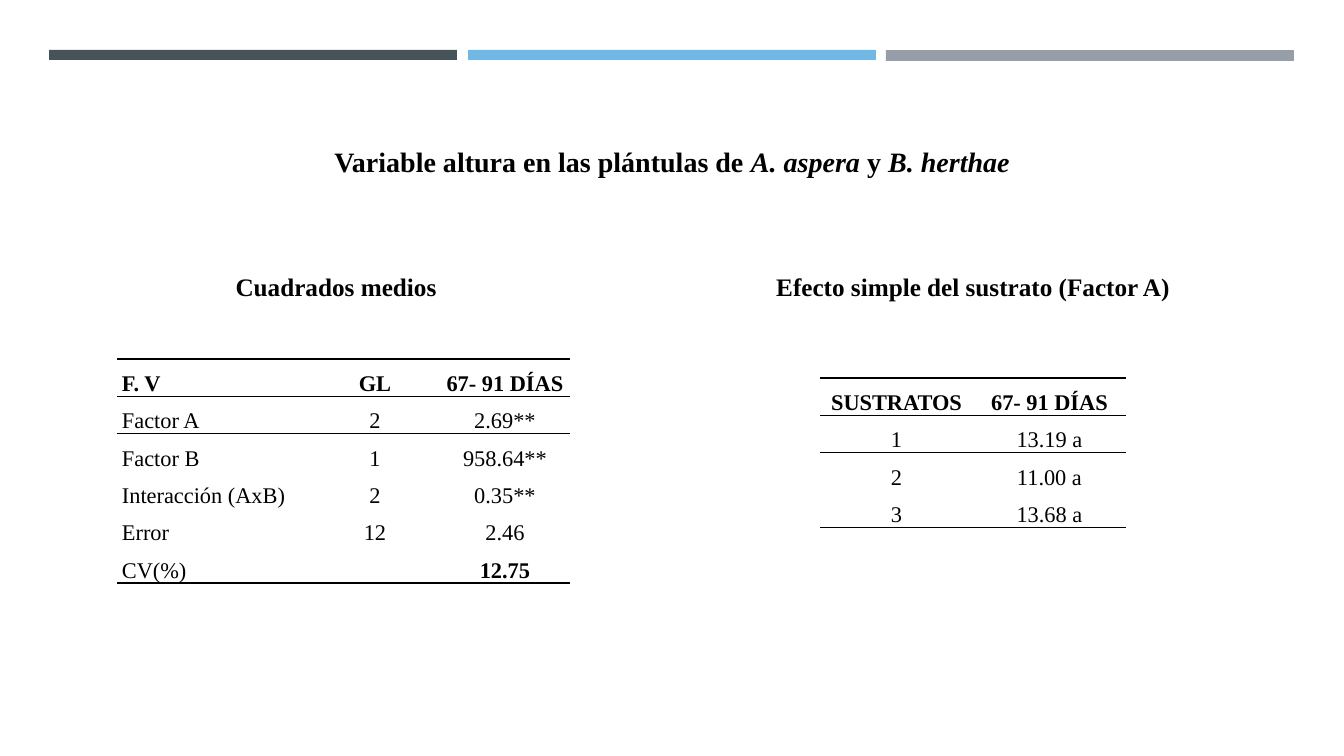
from lxml import etree
from pptx import Presentation
from pptx import util as u
from pptx.dml.color import RGBColor
from pptx.enum import shapes, text
from pptx.oxml import ns

SCALE = 914400 / 100.8
HUES = {"dark": "465359", "blue": "71B9E4", "gray": "969FA7", "ink": "000000"}
CENTER = text.PP_ALIGN.CENTER
LEFT = text.PP_ALIGN.LEFT


def px(*sizes):
    return [u.Emu(round(size * SCALE)) for size in sizes]


def write(para, runs, look, size):
    for name, value in look.items():
        setattr(para, name, value)
    for words, bold, slant in runs:
        run = para.add_run()
        run.text = words
        form = {"name": "Times New Roman", "size": u.Pt(size), "bold": bold, "italic": slant}
        for name, value in form.items():
            setattr(run.font, name, value)
        run.font.color.rgb = RGBColor.from_string(HUES["ink"])


deck = Presentation()
deck.slide_width, deck.slide_height = px(1344, 756)
slide = deck.slides.add_slide(deck.slide_layouts[5])

bars = [("dark", 49, 10), ("blue", 468, 10), ("gray", 886, 11)]
for hue, left, high in bars:
    bar = slide.shapes.add_shape(shapes.MSO_SHAPE.RECTANGLE, *px(left, 50, 408, high))
    bar.shadow.inherit = False
    bar.fill.solid()
    bar.fill.fore_color.rgb = RGBColor.from_string(HUES[hue])
    bar.line.fill.background()

title = slide.shapes.title
title.left, title.top, title.width, title.height = px(64, 139, 1216, 44)
heads = [
    (title, 20, 1.0, [
        ("Variable altura en las plántulas de ", True, False),
        ("A. aspera ", True, True),
        ("y ", True, False),
        ("B. herthae", True, True),
    ]),
]
for left, words in [(117, "Cuadrados medios"), (754, "Efecto simple del sustrato (Factor A)")]:
    box = slide.shapes.add_textbox(*px(left, 263, 438, 44))
    heads.append((box, 18, 1.1, [(words, True, False)]))

for box, size, lead, runs in heads:
    frame = box.text_frame
    form = {
        "word_wrap": True,
        "auto_size": text.MSO_AUTO_SIZE.NONE,
        "vertical_anchor": text.MSO_ANCHOR.MIDDLE,
    }
    for name, value in form.items():
        setattr(frame, name, value)
    look = {
        "alignment": CENTER,
        "line_spacing": lead,
        "space_before": u.Pt(4),
        "space_after": u.Pt(6),
    }
    write(frame.paragraphs[0], runs, look, size)

means = [
    ["F. V", "GL", "67- 91 DÍAS"],
    ["Factor A", "2", "2.69**"],
    ["Factor B", "1", "958.64**"],
    ["Interacción (AxB)", "2", "0.35**"],
    ["Error", "12", "2.46"],
    ["CV(%)", "", "12.75"],
]
soils = [
    ["SUSTRATOS", "67- 91 DÍAS"],
    ["1", "13.19 a"],
    ["2", "11.00 a"],
    ["3", "13.68 a"],
]
tables = [
    (means, 117, 359, [193, 130, 130], [LEFT, CENTER, CENTER]),
    (soils, 820, 378, [153, 153], [CENTER, CENTER]),
]
inset, none = px(5, 0)
for data, left, top, wides, sides in tables:
    last = len(data) - 1
    place = px(left, top, sum(wides), 37 * len(data))
    grid = slide.shapes.add_table(len(data), len(wides), *place).table
    grid.horz_banding = False
    for col, wide in zip(grid.columns, px(*wides)):
        col.width = wide
    for r, row in enumerate(data):
        grid.rows[r].height = px(37)[0]
        for c, words in enumerate(row):
            cell = grid.cell(r, c)
            form = {
                "margin_left": inset,
                "margin_right": inset,
                "margin_top": none,
                "margin_bottom": none,
                "vertical_anchor": text.MSO_ANCHOR.BOTTOM,
            }
            for name, value in form.items():
                setattr(cell, name, value)
            rules = {"lnL": False, "lnR": False, "lnT": r < 3, "lnB": r in (0, 1, last)}
            for tag, shown in rules.items():
                line = etree.SubElement(cell._tc.get_or_add_tcPr(), ns.qn("a:" + tag), w="12700")
                paint = etree.SubElement(line, ns.qn("a:solidFill" if shown else "a:noFill"))
                if shown:
                    etree.SubElement(paint, ns.qn("a:srgbClr"), val=HUES["ink"])
            cell.fill.background()
            if words:
                look = {"alignment": sides[c], "line_spacing": 1.5, "space_after": u.Pt(12)}
                bold = r == 0 or words == "12.75"
                write(cell.text_frame.paragraphs[0], [(words, bold, False)], look, 16)

deck.save("out.pptx")
